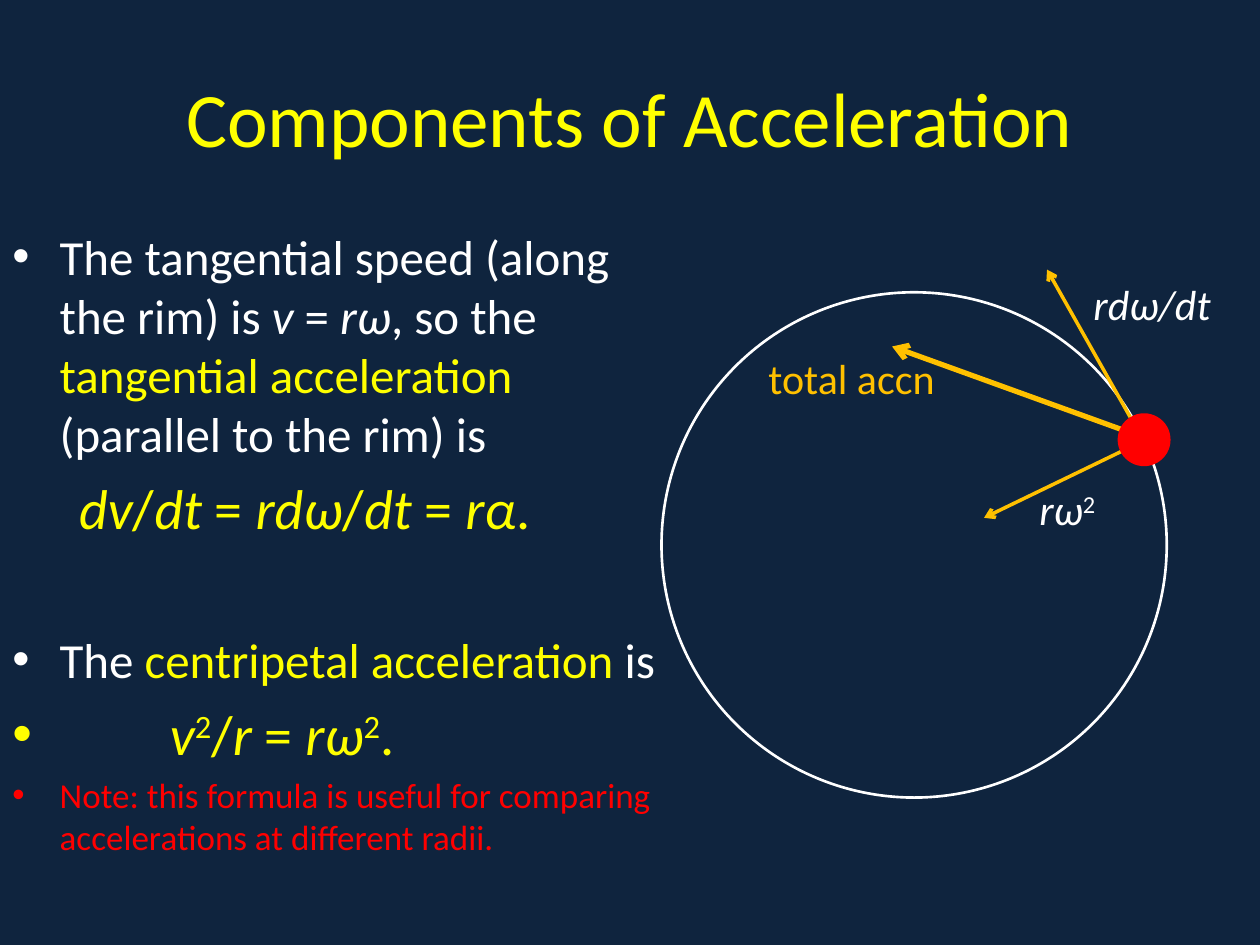
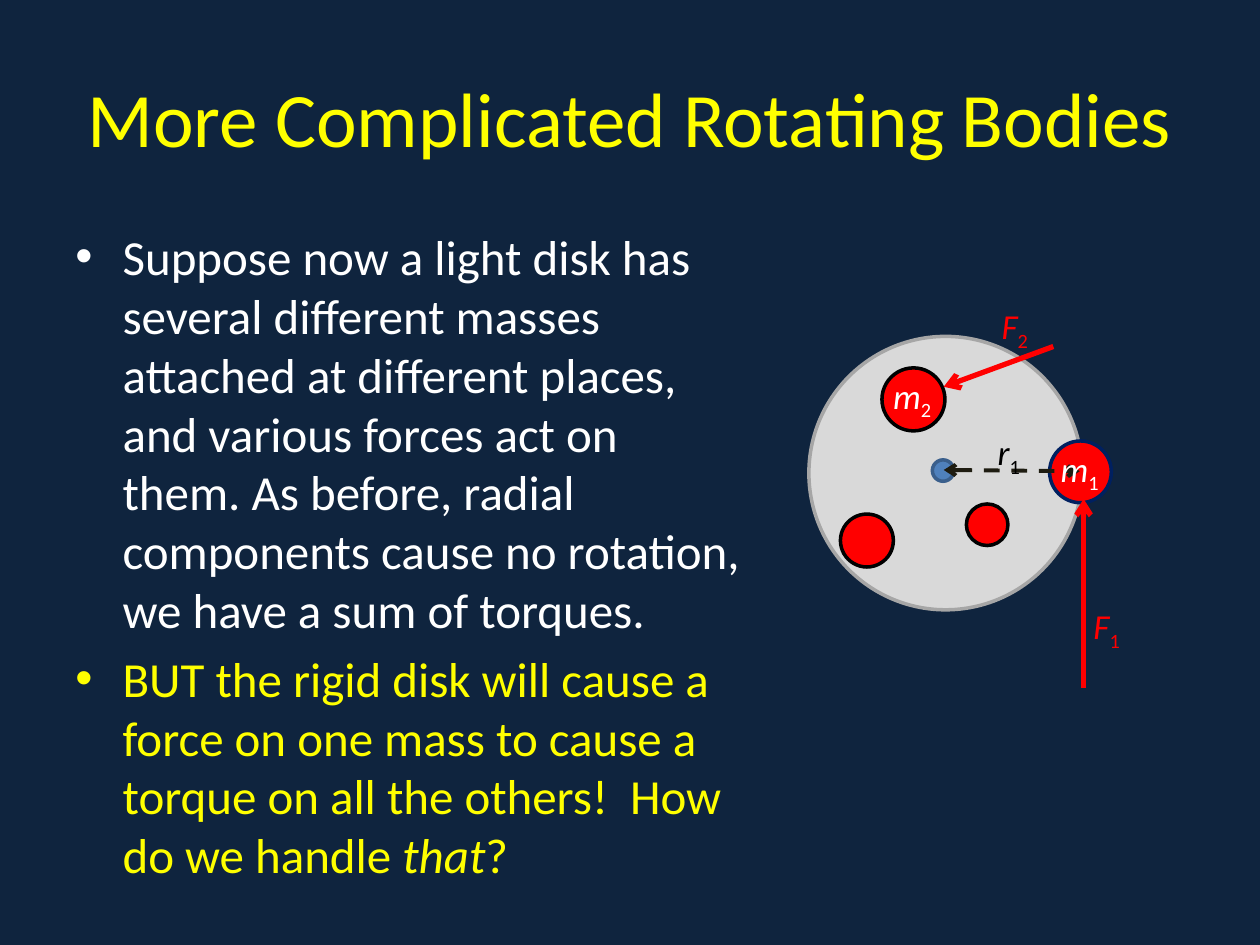
from lxml.etree import SubElement
from pptx import Presentation
from pptx.dml.color import RGBColor
from pptx.enum.dml import MSO_LINE
from pptx.enum.shapes import MSO_CONNECTOR, MSO_SHAPE
from pptx.enum.text import MSO_ANCHOR, PP_ALIGN
from pptx.oxml.ns import qn
from pptx.util import Inches, Pt

COLS, ROWS = 20, 15
INDENT = 0.75  # columns
HUES = {
    "night": "0F243E", "yellow": "FFFF00", "white": "FFFFFF", "red": "FF0000",
    "gold": "FFC000", "black": "000000", "ink": "1E1C11", "navy": "002060",
    "pale": "D9D9D9", "grey": "A6A6A6", "blue": "4F81BD", "steel": "3A5F8C",
}


class Deck:
    """Holds the style, a 20 by 15 grid and the current slide."""

    font = "Calibri"

    def __init__(self):
        self.file = Presentation()
        self.file.slide_width, self.file.slide_height = Inches(10), Inches(7.5)
        self.cell = self.file.slide_width // COLS

    def hue(self, name):
        return RGBColor.from_string(HUES[name])

    def grid(self, *cells):
        return [round(n * self.cell) for n in cells]

    def page(self, title):
        self.slide = self.file.slides.add_slide(self.file.slide_layouts[6])
        fill = self.slide.background.fill
        fill.solid()
        fill.fore_color.rgb = self.hue("night")
        frame = self.frame(1, 0.6, COLS - 2, 2.5)
        frame.vertical_anchor = MSO_ANCHOR.MIDDLE
        para = frame.paragraphs[0]
        para.alignment = PP_ALIGN.CENTER
        self.runs(para, 44, "yellow", [title])

    def frame(self, *box):
        frame = self.slide.shapes.add_textbox(*self.grid(*box)).text_frame
        frame.word_wrap = True
        return frame

    def runs(self, para, size, hue, parts):
        """A part is text, or (text, marks, hue): i italic, ^ raised, _ lowered."""
        for part in parts:
            text, marks, tint = part if isinstance(part, tuple) else (part, "", hue)
            run = para.add_run()
            run.text = text
            font = run.font
            font.name, font.size = self.font, Pt(size)
            font.color.rgb = self.hue(tint or hue)
            font.italic = "i" in marks
            for mark, base in (("^", "30000"), ("_", "-25000")):
                if mark in marks:
                    font._element.set("baseline", base)

    def body(self, box, items):
        """An item is (size, hue, parts, options)."""
        frame = self.frame(*box)
        for n, (size, hue, parts, opts) in enumerate(items):
            para = frame.paragraphs[0] if n == 0 else frame.add_paragraph()
            para.space_before = Pt(opts.get("gap", size * 0.2))
            props = para._p.get_or_add_pPr()
            left = self.grid(opts.get("left", INDENT))[0]
            props.set("marL", str(left))
            if opts.get("dot", True):
                props.set("indent", str(-left))
                if "dot_size" in opts:
                    SubElement(props, qn("a:buSzPts"), val=str(opts["dot_size"] * 100))
                SubElement(props, qn("a:buFont"), typeface="Arial")
                SubElement(props, qn("a:buChar"), char="•")
            self.runs(para, size, hue, parts)

    def label(self, x, y, wide, size, hue, *parts):
        frame = self.frame(x, y, wide, size / 24)
        self.runs(frame.paragraphs[0], size, hue, parts)

    def disc(self, x, y, wide, fill=None, edge=None, width=2):
        disc = self.slide.shapes.add_shape(MSO_SHAPE.OVAL, *self.grid(x, y, wide, wide))
        disc.shadow.inherit = False
        if fill:
            disc.fill.solid()
            disc.fill.fore_color.rgb = self.hue(fill)
        else:
            disc.fill.background()
        if edge:
            disc.line.color.rgb = self.hue(edge)
            disc.line.width = Pt(width)
        else:
            disc.line.fill.background()

    def arrow(self, start, end, hue, width, dash=False):
        """A dashed arrow points both ways."""
        link = self.slide.shapes.add_connector(
            MSO_CONNECTOR.STRAIGHT, *self.grid(*start, *end))
        link.line.color.rgb = self.hue(hue)
        link.line.width = Pt(width)
        if dash:
            link.line.dash_style = MSO_LINE.DASH
        props = link._element.spPr
        for tip in ("a:headEnd", "a:tailEnd") if dash else ("a:tailEnd",):
            SubElement(props.find(qn("a:ln")), qn(tip), type="arrow")
        SubElement(props, qn("a:effectLst"))


def rim(deck):
    deck.page("Components of Acceleration")
    deck.arrow((18.14, 6.94), (14.16, 5.5), "gold", 3)

    # Formulas
    def it(text):
        return text, "i", None

    def sup(text):
        return text, "^", None

    deck.body((0, 3.5, 10.84, 11), [
        (28, "white", ["The tangential speed (along the rim) is ", it("v"), " = ",
                       it("rω"), ", so the ",
                       ("tangential acceleration", "", "yellow"),
                       " (parallel to the rim) is"], {}),
        (32, "yellow", [it("dv"), "/", it("dt"), " = ", it("rdω"), "/", it("dt"),
                        " = ", it("rα"), "."], {"left": 1.06, "dot": False}),
        (28, "white", ["The ", ("centripetal acceleration ", "", "yellow"), "is"],
         {"gap": 51}),
        (32, "yellow", [it("v"), sup("2"), "/", it("r"), " = ", it("rω"), sup("2"), "."],
         {"left": 2.5, "dot_size": 28}),
        (20, "red", ["Note: this formula is useful for comparing "
                     "accelerations at different radii."], {}),
    ])

    # Rim, moving mass and its accelerations
    deck.disc(10.5, 4.64, 8.02, edge="white", width=1.5)
    deck.arrow((18.06, 7.04), (15.62, 8.22), "gold", 2)
    deck.label(16.3, 7.58, 1.72, 24, "white", it("rω"), sup("2"))
    deck.disc(17.74, 6.56, 0.84, "red")
    deck.arrow((17.94, 6.62), (16.62, 4.28), "gold", 2)
    deck.label(17.16, 4.32, 2.84, 24, "white", it("rdω/dt"))
    deck.label(12, 5.5, 3.66, 24, "gold", "total accn")


def masses(deck):
    deck.page("More Complicated Rotating Bodies")
    deck.body((1, 3.5, 11, 11), [
        (28, "white", ["Suppose now a light disk has several different masses attached "
                       "at different places, and various forces act on them. As before, "
                       "radial components cause no rotation, we have a sum of torques."],
         {}),
        (28, "yellow", ["BUT the rigid disk will cause a force on one mass to cause a "
                        "torque on all the others!  How do we handle ",
                        ("that", "i", None), "?"], {}),
    ])

    # Disk, hub and masses
    for disc in [
        (12.84, 5.34, 4.34, "pale", "grey"),
        (14.8, 7.3, 0.34, "blue", "steel"),
        (16.66, 7, 0.98, "red", "navy"),
        (14, 5.84, 1, "red", "black"),
        (13.34, 8.16, 0.84, "red", "black"),
        (15.34, 8, 0.66, "red", "black"),
    ]:
        deck.disc(*disc)

    # Forces and radius
    deck.arrow((17.2, 10.92), (17.2, 7.92), "red", 3)
    deck.arrow((14.98, 7.46), (17.14, 7.48), "ink", 2.25, dash=True)
    deck.arrow((16.72, 5.5), (14.98, 6.14), "red", 3)

    # Symbols with their index
    for x, y, hue, sign, index in [
        (17.16, 9.5, "red", "F", "1"),
        (15.64, 6.74, "black", "r", "1"),
        (16.64, 7, "white", "m", "1"),
        (13.98, 5.84, "white", "m", "2"),
        (15.7, 4.74, "red", "F", "2"),
    ]:
        deck.label(x, y, 1.5, 20, hue, (sign, "i", None), (index, "_", None))


def main():
    deck = Deck()
    rim(deck)
    masses(deck)
    deck.file.save("out.pptx")


if __name__ == "__main__":
    main()
